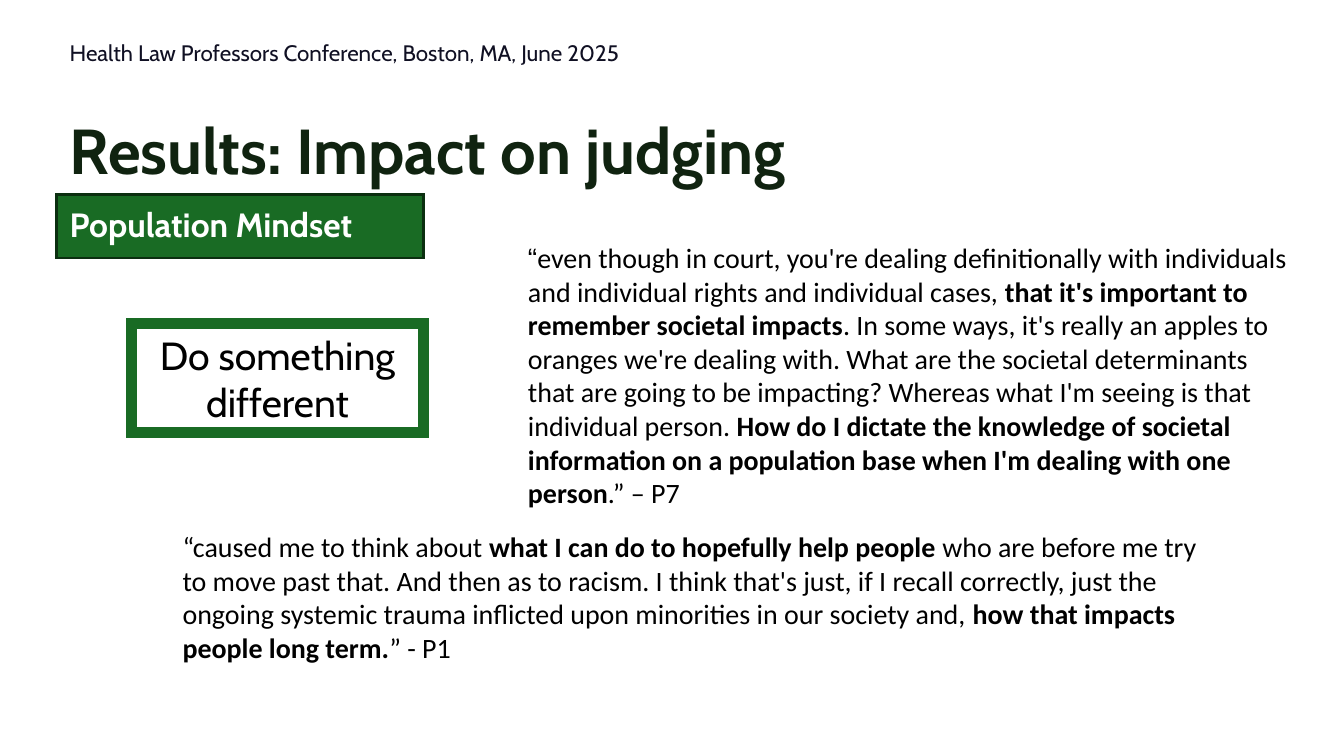
"""Build the slide on how a population mindset affects judging."""
from lxml import etree
from pptx import Presentation
from pptx.dml.color import RGBColor
from pptx.enum import shapes, text
from pptx.oxml.ns import qn
from pptx.util import Inches, Pt

GREEN, BLACK, WHITE = "196B24", "000000", "FFFFFF"
TOP, MIDDLE, BOTTOM = (text.MSO_ANCHOR.TOP, text.MSO_ANCHOR.MIDDLE,
                       text.MSO_ANCHOR.BOTTOM)

HEADER = [("Health Law Professors Conference, Boston, MA, June 2025", "Cabin", False)]
TITLE = [("Results: Impact on judging", "Cabin", True)]
LABEL = [("Population Mindset", "Cabin", True)]
ACTION = [("Do something different", "Cabin", False)]
QUOTE_P7 = [
    ("“", "Arial", False),
    ("even though in court, you're dealing definitionally with individuals and "
     "individual rights and individual cases, ", "Calibri", False),
    ("that it's important to remember societal impacts", "Calibri", True),
    (". In some ways, it's really an apples to oranges we're dealing with. What are "
     "the societal determinants that are going to be impacting? Whereas what I'm "
     "seeing is that individual person. ", "Calibri", False),
    ("How do I dictate the knowledge of societal information on a population base "
     "when I'm dealing with one person", "Calibri", True),
    (".” – P7", "Calibri", False),
]
QUOTE_P1 = [
    ("“caused me to think about ", "Calibri", False),
    ("what I can do to hopefully help people ", "Calibri", True),
    ("who are before me try to move past that. And then as to racism. I think that's "
     "just, if I recall correctly, just the ongoing systemic trauma inflicted upon "
     "minorities in our society and, ", "Calibri", False),
    ("how that impacts people long term.", "Calibri", True),
    ("” - P1", "Calibri", False),
]


def rgb(value):
    return RGBColor.from_string(value)


def write(s, runs, size, color=BLACK, anchor=TOP, inset=0.05,
          align=text.PP_ALIGN.LEFT):
    tf = s.text_frame
    tf.word_wrap = True
    tf.vertical_anchor = anchor
    tf.margin_left = tf.margin_right = Inches(0.1)
    tf.margin_top = tf.margin_bottom = Inches(inset)
    p = tf.paragraphs[0]
    p.alignment = align
    for words, font, bold in runs:
        r = p.add_run()
        r.text = words
        r.font.name, r.font.size, r.font.bold = font, Pt(size), bold
        r.font.color.rgb = rgb(color)
    return p


def add_text(slide, box, runs, size, **style):
    s = slide.shapes.add_textbox(*map(Inches, box))
    return write(s, runs, size, **style)


def add_box(slide, box, fill, line, width, runs, size, **style):
    s = slide.shapes.add_shape(shapes.MSO_SHAPE.RECTANGLE, *map(Inches, box))
    s.shadow.inherit = False
    s.fill.solid()
    s.fill.fore_color.rgb = rgb(fill)
    s.line.color.rgb = rgb(line)
    s.line.width = Pt(width)
    outline = s.element.spPr.find(qn("a:ln"))
    etree.SubElement(outline, qn("a:miter"), lim="800000")
    return write(s, runs, size, **style)


def main():
    prs = Presentation()
    prs.slide_width = Inches(10)
    prs.slide_height = prs.slide_width * 9 // 16
    slide = prs.slides.add_slide(prs.slide_layouts[6])

    add_text(slide, (0.42, 0.77, 9.16, 0.72), TITLE, 34,
             color="102310", anchor=BOTTOM, inset=0.1)
    add_box(slide, (0.42, 1.45, 2.73, 0.47), GREEN, "0B2F10", 1.5, LABEL, 18,
            color=WHITE, anchor=BOTTOM, inset=0.1)
    add_box(slide, (0.98, 2.41, 2.17, 0.81), WHITE, GREEN, 6, ACTION, 21,
            anchor=MIDDLE, align=text.PP_ALIGN.CENTER)
    add_text(slide, (3.83, 1.74, 5.89, 2.12), QUOTE_P7, 15)
    add_text(slide, (1.26, 3.89, 7.85, 1.11), QUOTE_P1, 15)
    p = add_text(slide, (0.42, 0.23, 4.58, 0.35), HEADER, 12,
                 color="101023", anchor=MIDDLE, inset=0.1)
    p.line_spacing = 0.9
    p.space_after = Pt(12)

    prs.save("out.pptx")


if __name__ == "__main__":
    main()
